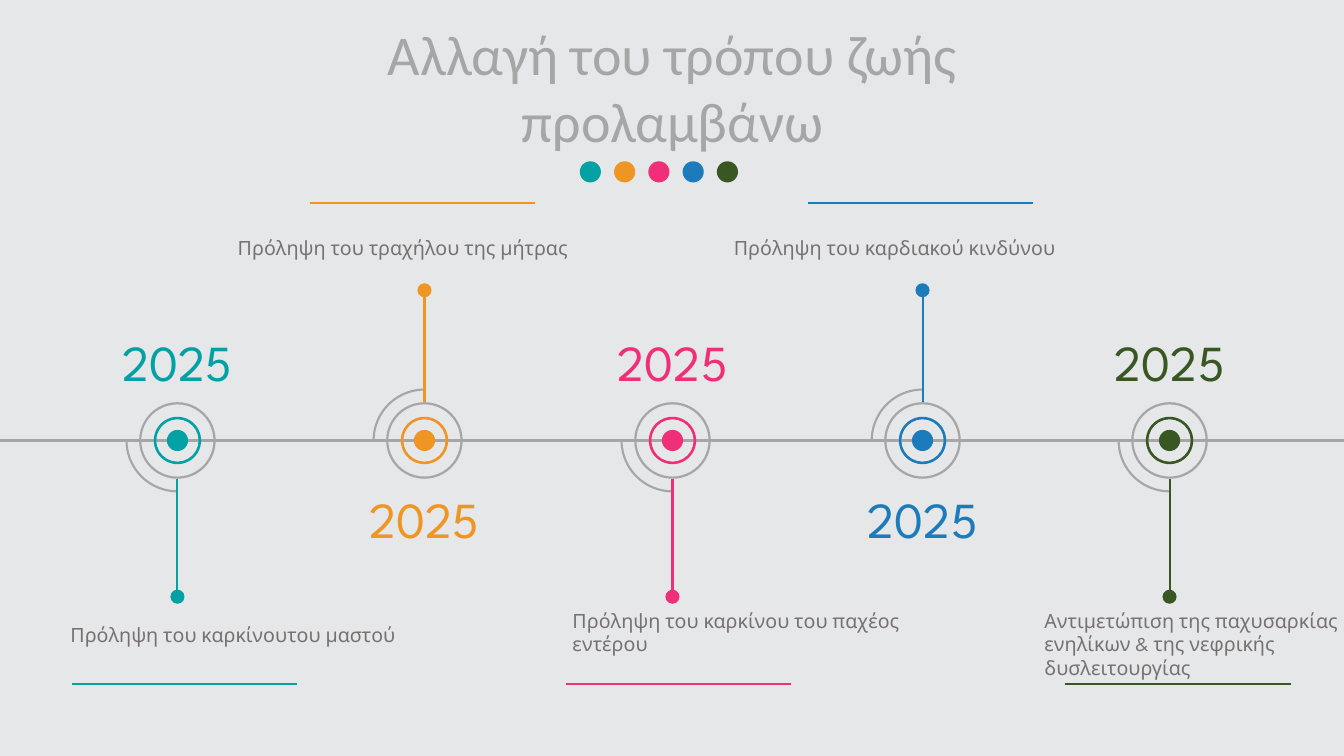
import pptx
import pptx.dml.color
import pptx.enum.shapes
import pptx.enum.text
import pptx.oxml.ns
import pptx.util
from pptx.util import Inches

COLORS = {
    "background": "E6E7E9",
    "gray": "A6A6A6",
    "label": "767171",
    "teal": "03A1A4",
    "orange": "EE9524",
    "pink": "EF3078",
    "blue": "1C7CBB",
    "green": "385723",
}
ACCENTS = ["teal", "orange", "pink", "blue", "green"]
SHAPE = pptx.enum.shapes.MSO_SHAPE
ALIGN = pptx.enum.text.PP_ALIGN
AXIS_Y = 4.37

# color, center x, points up, label text, label box, rule left
MILESTONES = [
    ("teal", 1.76, False, "Πρόληψη του καρκίνουτου μαστού",
     (0.6, 6.13, 3.5, 0.57), 0.71),
    ("orange", 4.21, True, "Πρόληψη του τραχήλου της μήτρας",
     (2.26, 2.29, 3.5, 0.57), 3.07),
    ("pink", 6.67, False, "Πρόληψη του καρκίνου του παχέος εντέρου",
     (5.58, 5.99, 3.5, 0.81), 5.61),
    ("blue", 9.15, True, "Πρόληψη του καρδιακού κινδύνου",
     (7.18, 2.29, 3.5, 0.57), 8.01),
    ("green", 11.6, False,
     "Αντιμετώπιση της παχυσαρκίας ενηλίκων & της νεφρικής δυσλειτουργίας",
     (10.26, 5.99, 3.68, 1.18), 10.56),
]


def rgb(name):
    return pptx.dml.color.RGBColor.from_string(COLORS[name])


def add_line(slide, x1, y1, x2, y2, color):
    line = slide.shapes.add_connector(
        pptx.enum.shapes.MSO_CONNECTOR.STRAIGHT,
        Inches(x1), Inches(y1), Inches(x2), Inches(y2))
    line.line.color.rgb = rgb(color)
    line.line.width = pptx.util.Pt(1.5)
    line._element.spPr.append(
        line._element.makeelement(pptx.oxml.ns.qn("a:effectLst"), {}))


def add_round(shapes, kind, cx, cy, size, color, adjust=()):
    """Place a filled circle or ring around its center."""
    sp = shapes.add_shape(kind, Inches(cx - size / 2), Inches(cy - size / 2),
                          Inches(size), Inches(size))
    sp.shadow.inherit = False
    for i, value in enumerate(adjust):
        sp.adjustments[i] = value
    sp.fill.solid()
    sp.fill.fore_color.rgb = rgb(color)
    sp.line.fill.background()
    return sp


def add_run(p, text, size, color, font):
    r = p.add_run()
    r.text = text
    r.font.size = pptx.util.Pt(size)
    r.font.name = font
    r.font.color.rgb = rgb(color)


def add_text(slide, box, text, size, color, align=ALIGN.LEFT):
    tf = slide.shapes.add_textbox(*map(Inches, box)).text_frame
    tf.word_wrap = True
    p = tf.paragraphs[0]
    p.alignment = align
    add_run(p, text, size, color, "League Spartan")


def add_title(slide, box, lines):
    title = slide.shapes.title
    title.left, title.top, title.width, title.height = map(Inches, box)
    tf = title.text_frame
    tf.word_wrap = True
    tf.auto_size = pptx.enum.text.MSO_AUTO_SIZE.NONE
    tf.vertical_anchor = pptx.enum.text.MSO_ANCHOR.TOP
    for i, text in enumerate(lines):
        p = tf.add_paragraph() if i else tf.paragraphs[0]
        p.alignment = ALIGN.CENTER
        add_run(p, text, 40, "gray", "Calibri")


def add_dots(slide, left, top, size=0.21, pitch=0.34):
    group = slide.shapes.add_group_shape()
    for i, color in enumerate(ACCENTS):
        add_round(group.shapes, SHAPE.OVAL, left + size / 2 + i * pitch,
                  top + size / 2, size, color)


def add_axis(slide):
    stops = [0, 1.76, 4.28, 6.74, 9.2, 11.66, 13.33]
    for start, end in zip(stops, stops[1:]):
        add_line(slide, start, AXIS_Y, end, AXIS_Y, "gray")


def add_milestone(slide, color, cx, up, text, label_box, rule_left):
    shapes = slide.shapes
    side = -1 if up else 1

    # Quarter arc on the stem side
    arc = add_round(shapes, SHAPE.ARC, cx, AXIS_Y, 1.01, color,
                    (54.204, 108.533))
    arc.fill.background()
    arc.line.color.rgb = rgb("gray")
    arc.line.width = pptx.util.Pt(1.5)
    arc.rotation = 90 if up else 0

    # Concentric node
    add_round(shapes, SHAPE.OVAL, cx, AXIS_Y, 0.21, color)
    add_round(shapes, SHAPE.DONUT, cx, AXIS_Y, 0.47, color, (0.053,))
    add_round(shapes, SHAPE.DONUT, cx, AXIS_Y, 0.76, "gray", (0.029,))

    # Stem with end dot
    add_line(slide, cx, AXIS_Y + side * 1.51, cx, AXIS_Y + side * 0.38, color)
    add_round(shapes, SHAPE.OVAL, cx, 2.88 if up else 5.92, 0.14, color)

    # Year, label and rule
    add_text(slide, (cx - 0.83, 4.79 if up else 3.24, 1.66, 0.71),
             "2025", 36, color, ALIGN.CENTER)
    add_text(slide, label_box, text, 14, "label")
    rule_y = 2.01 if up else 6.79
    add_line(slide, rule_left, rule_y, rule_left + 2.24, rule_y, color)


def main():
    prs = pptx.Presentation()
    prs.slide_width, prs.slide_height = Inches(13.33), Inches(7.5)
    slide = prs.slides.add_slide(prs.slide_layouts[5])
    slide.background.fill.solid()
    slide.background.fill.fore_color.rgb = rgb("background")

    add_title(slide, (2.69, 0.14, 7.96, 1.72),
              ["Αλλαγή του τρόπου ζωής", "προλαμβάνω"])
    add_dots(slide, 5.75, 1.6)
    add_axis(slide)
    for milestone in MILESTONES:
        add_milestone(slide, *milestone)
    prs.save("out.pptx")


if __name__ == "__main__":
    main()
